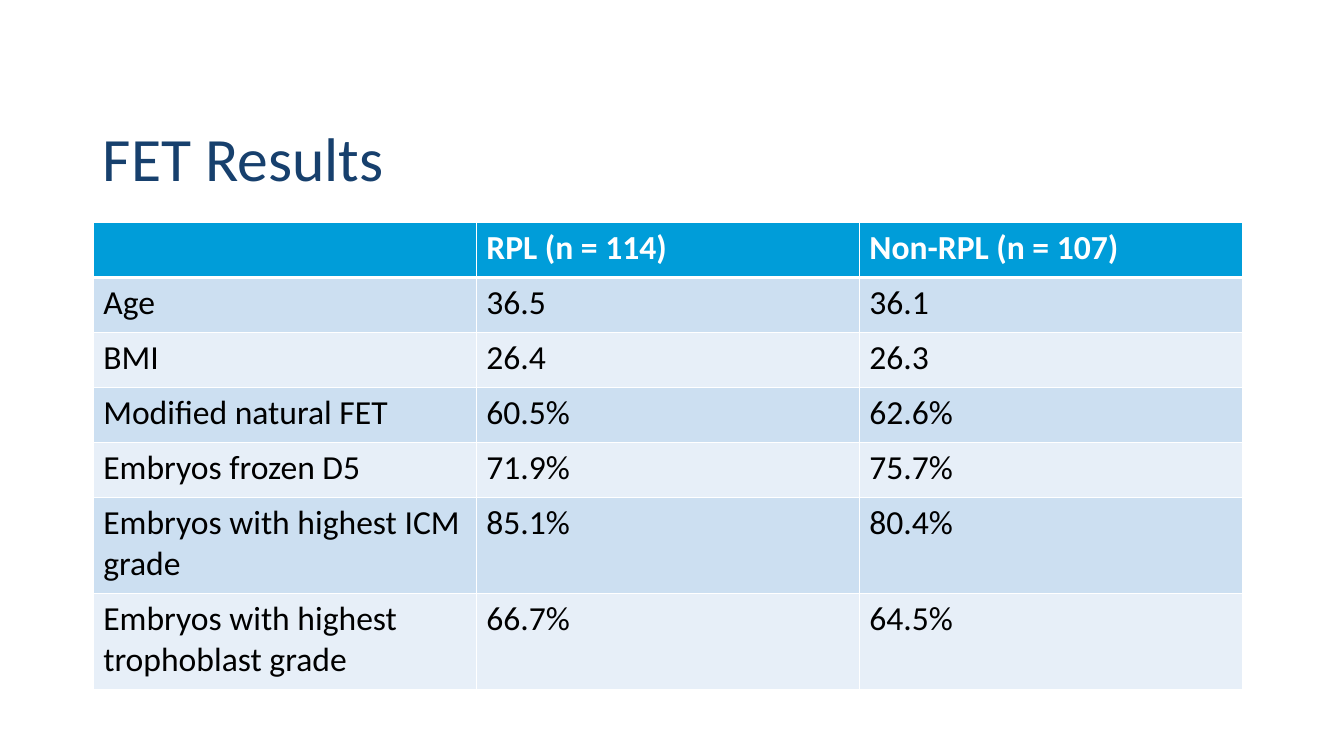
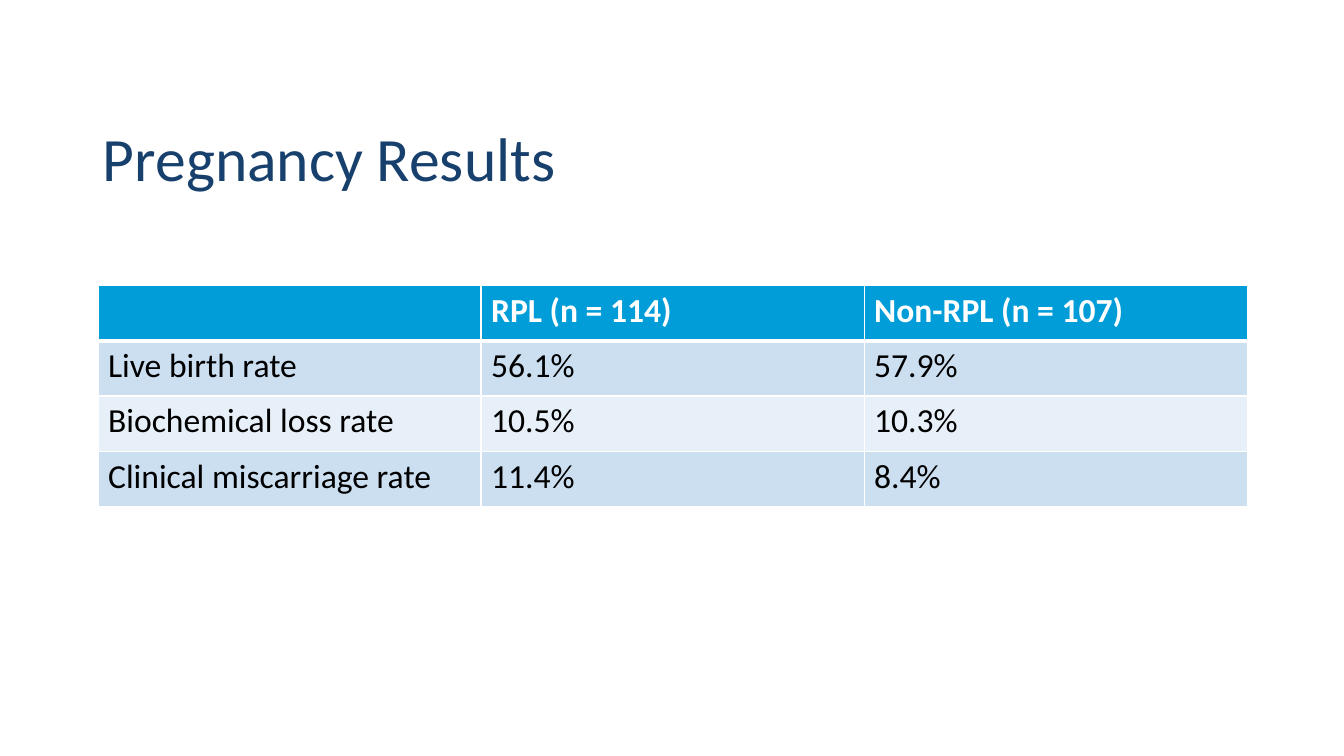
from dataclasses import dataclass

from lxml.etree import SubElement
from pptx import Presentation
from pptx.dml.color import RGBColor as RGB
from pptx.enum.text import MSO_ANCHOR as Anchor, PP_ALIGN as Align
from pptx.oxml.ns import qn
from pptx.util import Cm, Pt


@dataclass(frozen=True)
class Theme:
    font: str = "Calibri"
    title_size: Pt = Pt(44)
    table_size: Pt = Pt(24)
    title: RGB = RGB(0x17, 0x40, 0x6D)
    header: RGB = RGB(0x00, 0x9D, 0xD9)
    bands: tuple = (RGB(0xCC, 0xDF, 0xF1), RGB(0xE7, 0xEF, 0xF8))
    text: RGB = RGB(0, 0, 0)
    white: RGB = RGB(0xFF, 0xFF, 0xFF)
    rule: Pt = Pt(1)
    header_rule: Pt = Pt(3)


THEME = Theme()
TITLE_BOX = (Cm(2.34), Cm(2.24), Cm(29.21), Cm(3.68))
TABLE_WIDTH = Cm(28.96)
ROW_HEIGHT, TALL_ROW_HEIGHT = Cm(1.39), Cm(2.41)
ONE_LINE_CHARS = 26
HEADER = ("", "RPL (n = 114)", "Non-RPL (n = 107)")

FET_ROWS = [
    ("Age", "36.5", "36.1"),
    ("BMI", "26.4", "26.3"),
    ("Modified natural FET", "60.5%", "62.6%"),
    ("Embryos frozen D5", "71.9%", "75.7%"),
    ("Embryos with highest ICM grade", "85.1%", "80.4%"),
    ("Embryos with highest trophoblast grade", "66.7%", "64.5%"),
]
PREGNANCY_ROWS = [
    ("Live birth rate", "56.1%", "57.9%"),
    ("Biochemical loss rate", "10.5%", "10.3%"),
    ("Clinical miscarriage rate", "11.4%", "8.4%"),
]


def set_font(p, size, color, bold=False):
    f = p.font
    f.name, f.size, f.bold = THEME.font, size, bold
    f.color.rgb = color


def add_title(slide, text, box):
    sp = slide.shapes.title
    sp.left, sp.top, sp.width, sp.height = box
    tf = sp.text_frame
    tf.text, tf.vertical_anchor = text, Anchor.MIDDLE
    p = tf.paragraphs[0]
    p.alignment, p.line_spacing = Align.LEFT, 0.9
    set_font(p, THEME.title_size, THEME.title)


def set_borders(cell, top, bottom):
    """Draw white borders; call before filling, as the schema puts lines first."""
    tc_pr = cell._tc.get_or_add_tcPr()
    widths = {"a:lnL": THEME.rule, "a:lnR": THEME.rule, "a:lnT": top, "a:lnB": bottom}
    for tag, width in widths.items():
        ln = SubElement(tc_pr, qn(tag), w=str(int(width)))
        SubElement(SubElement(ln, qn("a:solidFill")), qn("a:srgbClr"), val=str(THEME.white))


def fill_cell(cell, text, row):
    is_header = row == 0
    set_borders(cell,
                top=THEME.header_rule if row == 1 else THEME.rule,
                bottom=THEME.header_rule if is_header else THEME.rule)
    cell.fill.solid()
    cell.fill.fore_color.rgb = THEME.header if is_header else THEME.bands[(row - 1) % 2]
    cell.text = text
    set_font(cell.text_frame.paragraphs[0], THEME.table_size,
             THEME.white if is_header else THEME.text, bold=is_header)


def add_results_table(slide, rows, left, top, width):
    """Place a header and banded rows; long labels get a two-line row."""
    rows = [HEADER, *rows]
    heights = [TALL_ROW_HEIGHT if len(row[0]) > ONE_LINE_CHARS else ROW_HEIGHT
               for row in rows]
    table = slide.shapes.add_table(len(rows), len(HEADER), left, top,
                                   width, sum(heights)).table
    for r, (values, height) in enumerate(zip(rows, heights)):
        table.rows[r].height = height
        for c, value in enumerate(values):
            fill_cell(table.cell(r, c), value, r)


def add_results_slide(prs, title, rows, left, top):
    slide = prs.slides.add_slide(prs.slide_layouts[5])
    add_title(slide, title, TITLE_BOX)
    add_results_table(slide, rows, left, top, TABLE_WIDTH)


def main():
    prs = Presentation()
    prs.slide_width, prs.slide_height = Cm(33.87), Cm(19.05)
    add_results_slide(prs, "FET Results", FET_ROWS, Cm(2.35), Cm(5.6))
    add_results_slide(prs, "Pregnancy Results", PREGNANCY_ROWS, Cm(2.47), Cm(7.2))
    prs.save("out.pptx")


if __name__ == "__main__":
    main()
